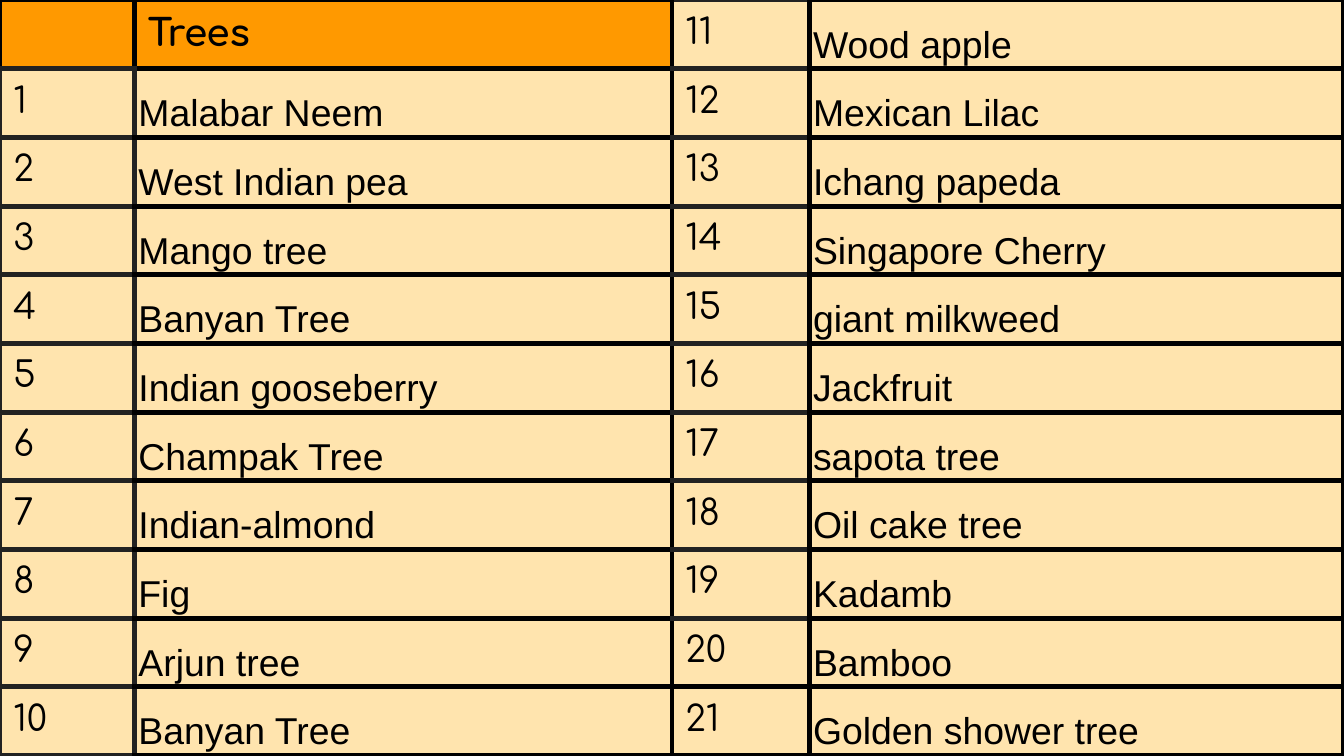
import pptx
import pptx.dml.color
import pptx.enum.text
import pptx.oxml
import pptx.oxml.ns
import pptx.util
from pptx.util import Inches

BLACK, CHARCOAL, CREAM, ORANGE = "000000", "222222", "FFE4AE", "FF9900"

trees = [
    "Malabar Neem", "West Indian pea", "Mango tree", "Banyan Tree",
    "Indian gooseberry", "Champak Tree", "Indian-almond", "Fig",
    "Arjun tree", "Banyan Tree", "Wood apple", "Mexican Lilac",
    "Ichang papeda", "Singapore Cherry", "giant milkweed", "Jackfruit",
    "sapota tree", "Oil cake tree", "Kadamb", "Bamboo", "Golden shower tree",
]
row_count = 11


def paint(fill, color):
    fill.solid()
    fill.fore_color.rgb = pptx.dml.color.RGBColor.from_string(color)


def draw_borders(cell, charcoal_sides):
    properties = cell._tc.get_or_add_tcPr()
    for position, side in enumerate("LRTB"):
        color = CHARCOAL if side in charcoal_sides else BLACK
        border = pptx.oxml.parse_xml(
            f'<a:ln{side} {pptx.oxml.ns.nsdecls("a")} w="{pptx.util.Pt(3)}">'
            f'<a:solidFill><a:srgbClr val="{color}"/></a:solidFill></a:ln{side}>'
        )
        properties.insert(position, border)


prs = pptx.Presentation()
prs.slide_width = Inches(10)
prs.slide_height = Inches(10) * 9 // 16
slide = prs.slides.add_slide(prs.slide_layouts[6])
paint(slide.background.fill, CREAM)

tree_table = slide.shapes.add_table(
    row_count, 4, Inches(0), Inches(0), prs.slide_width, prs.slide_height
).table
tree_table.first_row = False
tree_table.horz_banding = False
for column, width in zip(tree_table.columns, [1, 4, 1.02, 3.98]):
    column.width = Inches(width)
for row in tree_table.rows:
    row.height = prs.slide_height // row_count

entries = [("", "Trees")] + [(str(n), tree) for n, tree in enumerate(trees, 1)]
for index, entry in enumerate(entries):
    half, row = divmod(index, row_count)
    for part, text in enumerate(entry):
        column = 2 * half + part
        cell = tree_table.cell(row, column)
        header = index == 0
        tree_name = part == 1 and not header

        if header:
            paint(cell.fill, ORANGE)
        else:
            cell.fill.background()
        if column == 0:
            charcoal_sides = "B" if header else "LRTB"
        elif column == 1:
            charcoal_sides = "" if header else "L"
        elif column == 2:
            charcoal_sides = {9: "T", 10: ""}.get(row, "TB")
        else:
            charcoal_sides = ""
        draw_borders(cell, charcoal_sides)

        cell.margin_left = cell.margin_right = Inches(0.03 if tree_name else 0.1)
        cell.margin_top = cell.margin_bottom = Inches(0.02 if tree_name else 0.1)
        paragraph = cell.text_frame.paragraphs[0]
        if tree_name:
            cell.vertical_anchor = pptx.enum.text.MSO_ANCHOR.BOTTOM
            paragraph.line_spacing = 1.15
        if text:
            run = paragraph.add_run()
            run.text = text
            run.font.name = "Arial" if tree_name else "Comfortaa"
            run.font.size = pptx.util.Pt(20 if part == 1 else 19)
            run.font.bold = header
            paint(run.font.fill, BLACK)

prs.save("out.pptx")
